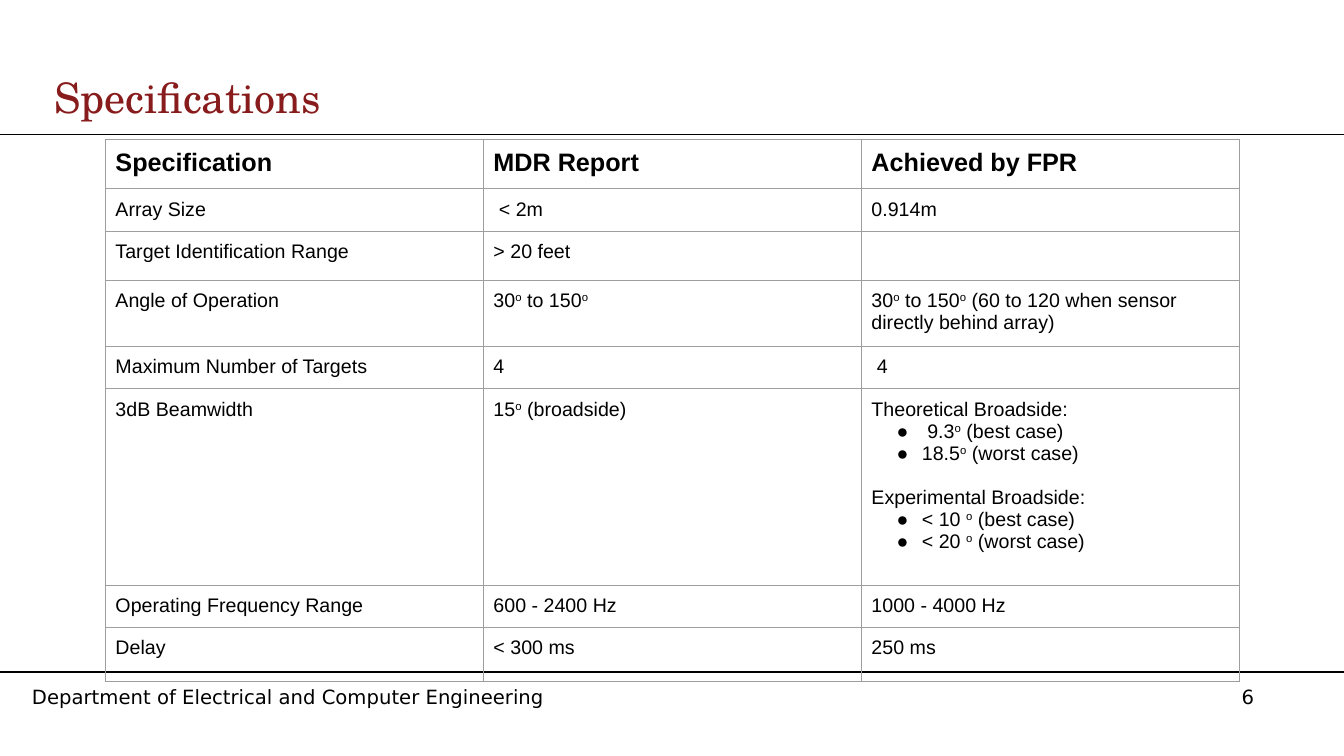
from dataclasses import dataclass

from lxml import etree
from pptx import Presentation
from pptx.dml.color import RGBColor
from pptx.enum.shapes import MSO_CONNECTOR
from pptx.enum.text import MSO_ANCHOR
from pptx.oxml.ns import qn
from pptx.util import Emu, Pt

STRAIGHT = MSO_CONNECTOR.STRAIGHT
TOP = MSO_ANCHOR.TOP
MIDDLE = MSO_ANCHOR.MIDDLE
EMU_PER_PX = 9525
SLIDE_WIDTH, SLIDE_HEIGHT = 1280, 720


@dataclass(frozen=True)
class Theme:
    ink: str = "000000"
    title: str = "881C1C"
    border: str = "9E9E9E"
    title_font: str = "TeX Gyre Schola"
    footer_font: str = "DejaVu Sans"
    table_font: str = "Arial"
    title_size: int = 30
    header_size: int = 18
    body_size: int = 14
    rule_width: float = 1
    border_width: float = 0.75
    group_gap: int = 16


SPECIFICATIONS = [
    ["Specification", "MDR Report", "Achieved by FPR"],
    ["Array Size", " < 2m", "0.914m"],
    ["Target Identification Range", "> 20 feet", ""],
    ["Angle of Operation", "30^o^ to 150^o",
     "30^o^ to 150^o^ (60 to 120 when sensor directly behind array)"],
    ["Maximum Number of Targets", "4", " 4"],
    ["3dB Beamwidth", "15^o^ (broadside)",
     "Theoretical Broadside:\n● 9.3^o^ (best case)\n●18.5^o^ (worst case)\n"
     "Experimental Broadside:\n●< 10 ^o^ (best case)\n●< 20 ^o^ (worst case)"],
    ["Operating Frequency Range", "600 - 2400 Hz", "1000 - 4000 Hz"],
    ["Delay", "< 300 ms", "250 ms"],
]
ROW_HEIGHTS = [45, 40, 46, 59, 39, 187, 40, 51]


def px(length):
    return Emu(length * EMU_PER_PX)


class SlideBuilder:
    def __init__(self, slide, theme):
        self.slide = slide
        self.theme = theme

    def style_font(self, font, name, size, color, bold=False):
        font.name = name
        font.size = Pt(size)
        font.bold = bold
        font.color.rgb = RGBColor.from_string(color)

    def rule(self, y):
        line = self.slide.shapes.add_connector(
            STRAIGHT, px(0), px(y), px(SLIDE_WIDTH), px(y))
        line.line.color.rgb = RGBColor.from_string(self.theme.ink)
        line.line.width = Pt(self.theme.rule_width)
        etree.SubElement(line._element.spPr, qn("a:effectLst"))

    def text(self, text, left, top, width, height, font, size, color, anchor=TOP):
        box = self.slide.shapes.add_textbox(px(left), px(top), px(width), px(height))
        frame = box.text_frame
        frame.word_wrap = True
        frame.vertical_anchor = anchor
        frame.text = text
        self.style_font(frame.paragraphs[0].runs[0].font, font, size, color)

    def bullet(self, paragraph):
        properties = paragraph._p.get_or_add_pPr()
        properties.set("marL", str(px(48)))
        properties.set("indent", str(px(-24)))
        color = etree.SubElement(properties, qn("a:buClr"))
        etree.SubElement(color, qn("a:srgbClr"), val=self.theme.ink)
        etree.SubElement(properties, qn("a:buFont"), typeface=self.theme.table_font)
        etree.SubElement(properties, qn("a:buChar"), char="●")

    def borders(self, cell):
        properties = cell._tc.get_or_add_tcPr()
        for index, side in enumerate(("lnL", "lnR", "lnT", "lnB")):
            line = etree.Element(qn(f"a:{side}"), w=str(Pt(self.theme.border_width)))
            fill = etree.SubElement(line, qn("a:solidFill"))
            etree.SubElement(fill, qn("a:srgbClr"), val=self.theme.border)
            properties.insert(index, line)

    def cell(self, cell, text, is_header):
        theme = self.theme
        size = theme.header_size if is_header else theme.body_size
        cell.margin_left = cell.margin_right = px(10)
        cell.margin_top = cell.margin_bottom = px(9)
        cell.fill.background()
        self.borders(cell)
        frame = cell.text_frame
        frame.text = text
        for index, paragraph in enumerate(frame.paragraphs):
            content = paragraph.text
            paragraph.text = ""
            if content.startswith("●"):
                self.bullet(paragraph)
                content = content[1:]
            elif index:
                paragraph.space_before = Pt(theme.group_gap)
            for position, part in enumerate(content.split("^")):
                if not part:
                    continue
                run = paragraph.add_run()
                run.text = part
                self.style_font(run.font, theme.table_font, size, theme.ink, is_header)
                if position % 2:
                    run._r.get_or_add_rPr().set("baseline", "30000")

    def table(self, rows, left, top, column_width, row_heights):
        columns = len(rows[0])
        table = self.slide.shapes.add_table(
            len(rows), columns, px(left), px(top),
            px(column_width * columns), px(sum(row_heights))).table
        table.first_row = False
        table.horz_banding = False
        for column in table.columns:
            column.width = px(column_width)
        for row_index, (values, height) in enumerate(zip(rows, row_heights)):
            table.rows[row_index].height = px(height)
            for column_index, value in enumerate(values):
                self.cell(table.cell(row_index, column_index), value, row_index == 0)


def main():
    presentation = Presentation()
    presentation.slide_width = px(SLIDE_WIDTH)
    presentation.slide_height = px(SLIDE_HEIGHT)
    slide = presentation.slides.add_slide(presentation.slide_layouts[6])
    theme = Theme()
    builder = SlideBuilder(slide, theme)
    for y in (128, 640):
        builder.rule(y)
    footer = (theme.footer_font, theme.body_size, theme.ink)
    builder.text("6", 1173, 648, 85, 33, *footer)
    builder.text("Department of Electrical and Computer Engineering",
                 21, 648, 509, 32, *footer)
    builder.text("Specifications", 42, 64, 1238, 56,
                 theme.title_font, theme.title_size, theme.title, MIDDLE)
    builder.table(SPECIFICATIONS, 100, 133, 360, ROW_HEIGHTS)
    presentation.save("out.pptx")


if __name__ == "__main__":
    main()
